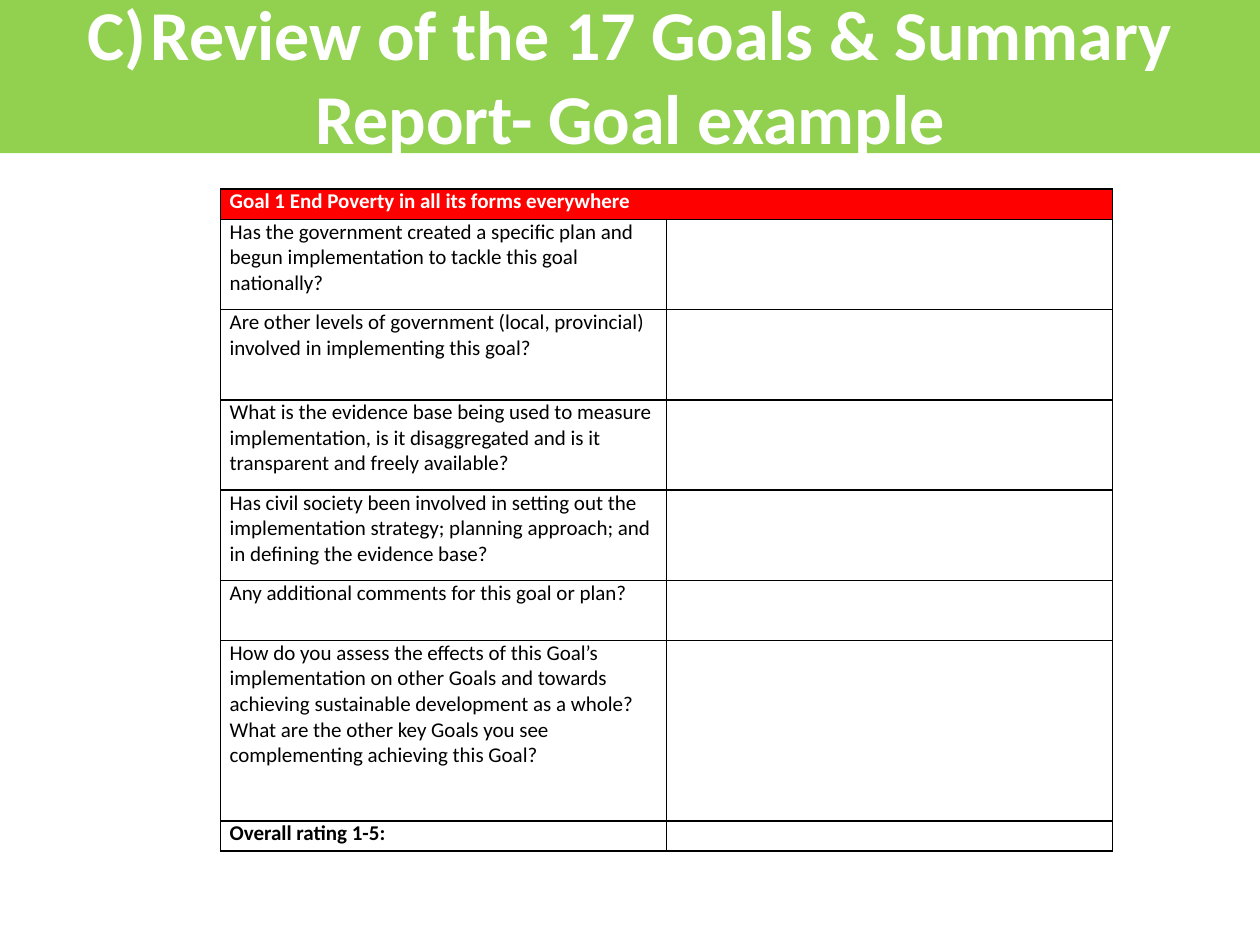
import pptx
import pptx.dml.color
import pptx.enum.shapes
import pptx.enum.text
import pptx.oxml.xmlchemy
import pptx.util
from pptx.util import Cm

FONT = "Calibri"
TITLE = "C)\tReview of the 17 Goals & Summary Report- Goal example"
HEADING = "Goal 1 End Poverty in all its forms everywhere"
RATING = "Overall rating 1-5:"
# Each question row: height in cm, then its paragraphs
QUESTIONS = [
    (1.82, ["Has the government created a specific plan and begun implementation "
            "to tackle this goal nationally?"]),
    (1.82, ["Are other levels of government (local, provincial) involved in "
            "implementing this goal?"]),
    (1.82, ["What is the evidence base being used to measure implementation, is it "
            "disaggregated and is it transparent and freely available?"]),
    (1.82, ["Has civil society been involved in setting out the implementation "
            "strategy; planning approach; and in defining the evidence base?"]),
    (1.21, ["Any additional comments for this goal or plan?"]),
    (3.64, ["How do you assess the effects of this Goal’s implementation on other "
            "Goals and towards achieving sustainable development as a whole?",
            "What are the other key Goals you see complementing achieving this Goal?"]),
]
SINGLE_ROW = 0.61


def color(value):
    return pptx.dml.color.RGBColor.from_string(value)


def style_font(para, size, value, bold=False):
    font = para.font
    font.name, font.size, font.bold = FONT, pptx.util.Pt(size), bold
    font.color.rgb = color(value)


def add_title(page):
    box = page.shapes.add_shape(pptx.enum.shapes.MSO_SHAPE.RECTANGLE,
                                Cm(0), Cm(-0.08), Cm(25.4), Cm(3.17))
    box.shadow.inherit = False
    box.fill.solid()
    box.fill.fore_color.rgb = color("92D050")
    box.line.fill.background()
    frame = box.text_frame
    frame.word_wrap = True
    frame.vertical_anchor = pptx.enum.text.MSO_ANCHOR.MIDDLE
    para = frame.paragraphs[0]
    para.text = TITLE
    para.alignment = pptx.enum.text.PP_ALIGN.CENTER
    style_font(para, 40, "FFFFFF", bold=True)


def add_child(parent, tag, **attributes):
    child = pptx.oxml.xmlchemy.OxmlElement(tag)
    for name, value in attributes.items():
        child.set(name, value)
    parent.append(child)
    return child


def draw_borders(cell):
    properties = cell._tc.get_or_add_tcPr()
    for side in ("a:lnL", "a:lnR", "a:lnT", "a:lnB"):
        line = add_child(properties, side, w=str(pptx.util.Pt(1)))
        add_child(add_child(line, "a:solidFill"), "a:srgbClr", val="000000")


def format_cell(cell, lines=(), value="000000", bold=False, fill=None):
    cell.margin_left = cell.margin_right = Cm(0.18)
    cell.margin_top = cell.margin_bottom = Cm(0)
    draw_borders(cell)
    if fill:
        cell.fill.solid()
        cell.fill.fore_color.rgb = color(fill)
    else:
        cell.fill.background()
    cell.text = "\n".join(lines)
    for para in cell.text_frame.paragraphs:
        style_font(para, 12, value, bold)
        if not lines:
            # An empty cell takes its line height from the paragraph end mark
            add_child(para._p, "a:endParaRPr", sz="1200")


def add_review_table(page):
    heights = [SINGLE_ROW, *(height for height, _ in QUESTIONS), SINGLE_ROW]
    table = page.shapes.add_table(len(heights), 2, Cm(4.45), Cm(3.81),
                                  Cm(17.98), Cm(sum(heights))).table
    table.first_row = table.horz_banding = False
    for row, height in zip(table.rows, heights):
        row.height = Cm(height)

    # Heading across both columns
    format_cell(table.cell(0, 0), [HEADING], "FFFFFF", bold=True, fill="FF0000")
    format_cell(table.cell(0, 1), fill="FF0000")
    table.cell(0, 0).merge(table.cell(0, 1))

    # Questions on the left, room for answers on the right
    for index, (_, lines) in enumerate(QUESTIONS, start=1):
        format_cell(table.cell(index, 0), lines)
        format_cell(table.cell(index, 1))

    # Rating
    last = len(heights) - 1
    format_cell(table.cell(last, 0), [RATING], bold=True)
    format_cell(table.cell(last, 1))


def main():
    deck = pptx.Presentation()
    deck.slide_width, deck.slide_height = Cm(25.4), Cm(19.05)
    page = deck.slides.add_slide(deck.slide_layouts[6])
    add_title(page)
    add_review_table(page)
    deck.save("out.pptx")


if __name__ == "__main__":
    main()
